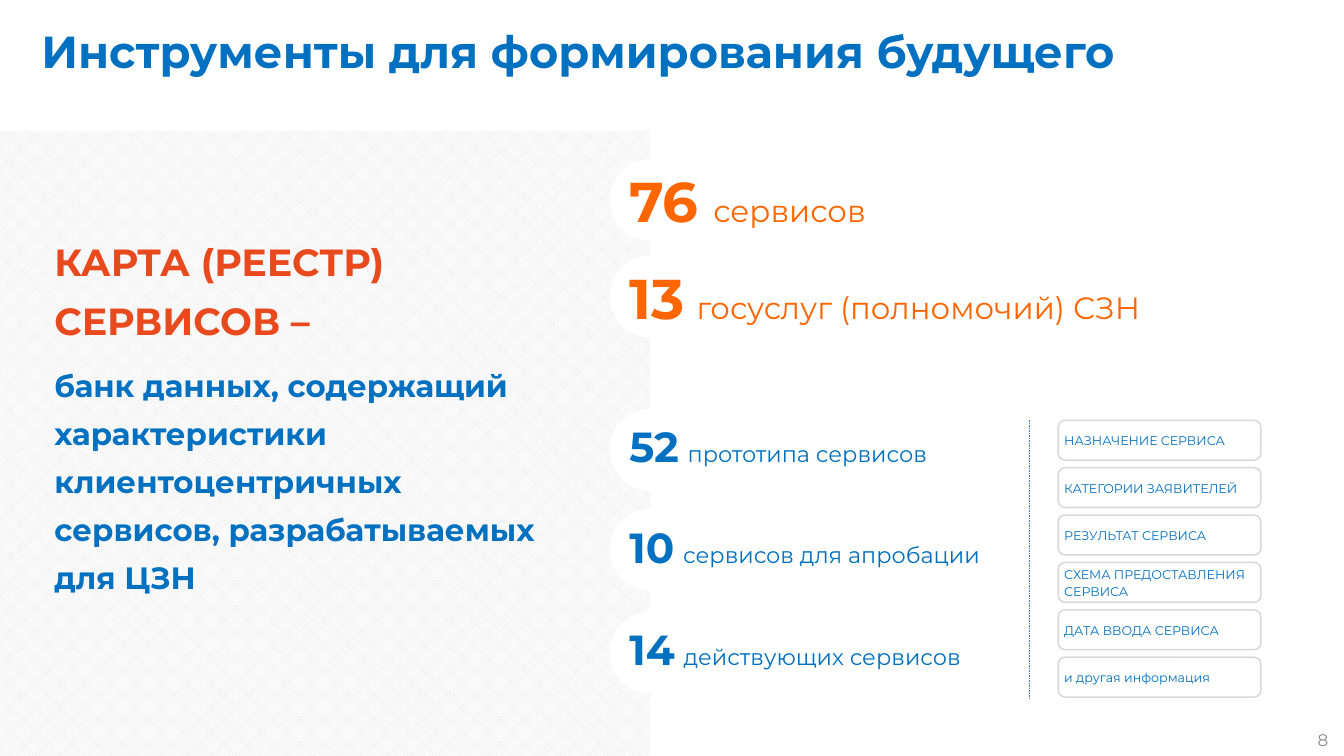
from lxml.etree import SubElement
from pptx import Presentation
from pptx.dml.color import RGBColor
from pptx.enum.dml import MSO_LINE as Dash, MSO_PATTERN as Pattern
from pptx.enum.shapes import MSO_CONNECTOR as Connector, MSO_SHAPE as Shape
from pptx.enum.text import MSO_ANCHOR as Anchor, MSO_AUTO_SIZE as AutoSize, PP_ALIGN as Align
from pptx.oxml.ns import qn
from pptx.util import Inches, Pt

BLUE, ORANGE, RED = "0070C0", "FF6600", "E8491D"
WHITE, GREY = "FFFFFF", "D9D9D9"


def rgb(value):
    return RGBColor.from_string(value)


def write(paragraph, text, size=18, color=BLUE, bold=False):
    for index, part in enumerate(text.split("\n")):
        if index:
            paragraph.add_line_break()
        run = paragraph.add_run()
        run.text = part
        run.font.name = "Montserrat"
        run.font.size = Pt(size)
        run.font.bold = bold
        run.font.color.rgb = rgb(color)


prs = Presentation()
prs.slide_width, prs.slide_height = Inches(26.67), Inches(15)
slide = prs.slides.add_slide(prs.slide_layouts[5])
shapes = slide.shapes

title = shapes.title
title.left, title.top, title.width, title.height = map(Inches, (0.72, 0.42, 24.22, 1.18))
title.text_frame.vertical_anchor = Anchor.TOP
title.text_frame.auto_size = AutoSize.SHAPE_TO_FIT_TEXT
heading = title.text_frame.paragraphs[0]
heading.alignment = Align.LEFT
write(heading, "Инструменты для формирования будущего", size=64, bold=True)

panel = shapes.add_shape(Shape.RECTANGLE, 0, Inches(2.6), Inches(12.9), Inches(12.4))
panel.shadow.inherit = False
panel.fill.patterned()
panel.fill.pattern = Pattern.OUTLINED_DIAMOND
panel.fill.fore_color.rgb = rgb("E6E6E6")
panel.fill.back_color.rgb = rgb(WHITE)
panel.line.fill.background()

definition = shapes.add_textbox(Inches(0.98), Inches(4.41), Inches(10.43), Inches(7.53)).text_frame
definition.word_wrap = True
term = definition.paragraphs[0]
term.line_spacing = 1.3
write(term, "КАРТА (РЕЕСТР)\nСЕРВИСОВ –", size=54, color=RED, bold=True)
meaning = definition.add_paragraph()
meaning.line_spacing = 1.3
meaning.space_before = Pt(18)
write(meaning, "банк данных, содержащий характеристики клиентоцентричных сервисов, "
      "разрабатываемых для ЦЗН", size=44, bold=True)

totals = dict(color=ORANGE, number_size=80, gap_size=66, label_size=44, height=1.45)
stages = dict(color=BLUE, number_size=60, gap_size=48, label_size=32, height=1.11)
counts = [
    ("76", "сервисов", 3.18, 3.25, 6.24, totals | {"gap_size": 80}),
    ("13", "госуслуг (полномочий) СЗН", 5.1, 5.17, 10.71, totals),
    ("52", "прототипа сервисов", 8.14, 8.29, 6.31, stages),
    ("10", "сервисов для апробации", 10.12, 10.29, 7.36, stages),
    ("14", "действующих сервисов", 12.16, 12.32, 7.02, stages),
]
for number, label, notch_top, text_top, width, style in counts:
    notch = shapes.add_shape(Shape.OVAL, Inches(12.13), Inches(notch_top), Inches(1.57), Inches(1.57))
    notch.shadow.inherit = False
    notch.fill.solid()
    notch.fill.fore_color.rgb = rgb(WHITE)
    notch.line.color.rgb = rgb(WHITE)
    notch.line.width = Pt(4.5)

    count = shapes.add_textbox(Inches(12.39), Inches(text_top), Inches(width), Inches(style["height"]))
    count.text_frame.word_wrap = number == "76"
    count.text_frame.auto_size = AutoSize.SHAPE_TO_FIT_TEXT
    line = count.text_frame.paragraphs[0]
    write(line, number, size=style["number_size"], color=style["color"], bold=True)
    write(line, " ", size=style["gap_size"], color=style["color"])
    write(line, label, size=style["label_size"], color=style["color"])

divider = shapes.add_connector(Connector.STRAIGHT, Inches(20.43), Inches(8.34), Inches(20.43), Inches(13.89))
divider.line.color.rgb = rgb("4472C4")
divider.line.width = Pt(0.5)
divider.line.dash_style = Dash.DASH
SubElement(divider._element.spPr, qn("a:effectLst"))

fields = [
    "НАЗНАЧЕНИЕ СЕРВИСА",
    "КАТЕГОРИИ ЗАЯВИТЕЛЕЙ",
    "РЕЗУЛЬТАТ СЕРВИСА",
    "СХЕМА ПРЕДОСТАВЛЕНИЯ СЕРВИСА",
    "ДАТА ВВОДА СЕРВИСА",
    "и другая информация",
]
for row, field in enumerate(fields):
    card = shapes.add_shape(Shape.ROUNDED_RECTANGLE, Inches(21), Inches(8.34 + row * 0.94),
                            Inches(4.02), Inches(0.79))
    card.shadow.inherit = False
    card.fill.background()
    card.line.color.rgb = rgb(GREY)
    card.line.width = Pt(2.25)
    frame = card.text_frame
    frame.word_wrap = True
    frame.vertical_anchor = Anchor.MIDDLE
    frame.margin_left = frame.margin_right = Inches(0.08)
    frame.margin_top = frame.margin_bottom = Inches(0.04)
    caption = frame.paragraphs[0]
    caption.alignment = Align.LEFT
    caption.line_spacing = 1.07
    write(caption, field)

page = shapes.add_textbox(Inches(20.46), Inches(14.43), Inches(6), Inches(0.51)).text_frame
page.word_wrap = True
page.vertical_anchor = Anchor.MIDDLE
page.paragraphs[0].alignment = Align.RIGHT
write(page.paragraphs[0], "8", size=24, color="8C8C8C")

prs.save("out.pptx")
